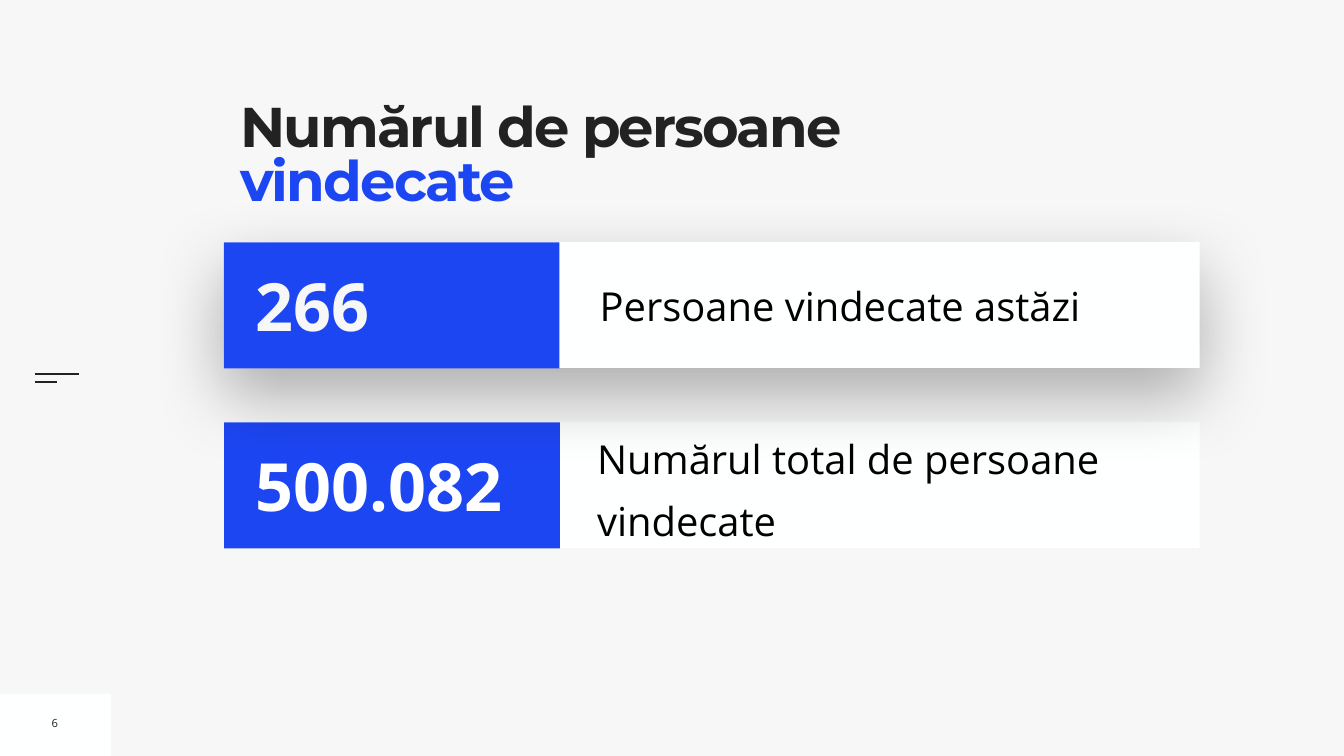
from lxml.etree import SubElement as Sub
from pptx import Presentation
from pptx.dml.color import RGBColor as Rgb
from pptx.enum.shapes import MSO_CONNECTOR as Conn, MSO_SHAPE as Kind
from pptx.enum.text import MSO_ANCHOR as Anchor, PP_ALIGN as Align
from pptx.oxml.ns import qn
from pptx.util import Inches, Pt

HUES = {"page": "F7F7F7", "white": "FEFFFF", "pure": "FFFFFF",
        "blue": "1D46F3", "ink": "222222", "black": "000000"}
deck = Presentation()
deck.slide_width, deck.slide_height = Inches(26.67), Inches(15)
COL, ROW = deck.slide_width / 60, deck.slide_height / 60
slide = deck.slides.add_slide(deck.slide_layouts[6])
slide.background.fill.solid()
slide.background.fill.fore_color.rgb = Rgb.from_string(HUES["page"])


def block(x, y, w, h, hue):
    rect = slide.shapes.add_shape(Kind.RECTANGLE, round(x * COL), round(y * ROW),
                                  round(w * COL), round(h * ROW))
    rect.shadow.inherit = False
    rect.line.fill.background()
    if hue:
        rect.fill.solid()
        rect.fill.fore_color.rgb = Rgb.from_string(HUES[hue])
    else:
        rect.fill.background()
    return rect


def write(box, *runs, size, font="Open Sans", bold=False, pad=0.1, lead=None,
          before=0, track=0, align=Align.LEFT, anchor=Anchor.MIDDLE, wrap=True,
          fill=None):
    frame = block(*box, fill).text_frame
    frame.word_wrap, frame.vertical_anchor = wrap, anchor
    frame.margin_left = frame.margin_right = Inches(pad)
    frame.margin_top = frame.margin_bottom = Inches(pad)
    para = frame.paragraphs[0]
    para.alignment, para.line_spacing, para.space_before = align, lead, Pt(before)
    for text, hue in runs:
        run = para.add_run()
        run.text = text
        run.font.name, run.font.size, run.font.bold = font, Pt(size), bold
        run.font.color.rgb = Rgb.from_string(HUES[hue])
        if track:
            run.font._element.set("spc", str(round(track * 100)))


block(0, 55.08, 4.95, 4.92, "white")
for y, end in [(29.68, 3.53), (30.32, 2.54)]:
    x, top = round(1.55 * COL), round(y * ROW)
    line = slide.shapes.add_connector(Conn.STRAIGHT, x, top, round(end * COL), top)
    line.line.color.rgb = Rgb.from_string(HUES["ink"])
    line.line.width = Pt(3)
    Sub(line._element.spPr, qn("a:effectLst"))

write((10.73, 8.28, 29.27, 10.92), ("Numărul de persoane ", "ink"),
      ("vindecate", "blue"), size=80, font="Montserrat", bold=True, pad=0,
      lead=0.8, track=-2.7, anchor=Anchor.TOP, fill="page")
write((2.07, 56.36, 0.76, 2.04), ("6", "ink"), size=16, align=Align.CENTER,
      wrap=False)

cards = [
    (10.01, 33.48, "500.082", "pure", "Numărul total de persoane vindecate",
     (26.66, 33.56, 26.88, 9.44), {"pad": 0, "lead": 1.3, "before": 20}),
    (9.99, 19.2, "266", "page", "Persoane vindecate astăzi",
     (26.55, 21.9, 26.46, 4.64), {}),
]
for x, y, count, hue, label, box, style in cards:
    card = block(x, y, 53.56 - x, 10, "white")
    write(box, (label, "black"), size=57, **style)
    block(x, y + 0.04, 14.98, 10, "blue")
    write((x + 1.19, y + 1.42, 13.57, 7.2), (count, hue), size=95, bold=True,
          fill="blue")

glow = card._element.spPr.find(qn("a:effectLst"))
shade = Sub(glow, qn("a:outerShdw"), blurRad=str(Pt(100)), dist=str(Pt(40)),
            dir="5400000", rotWithShape="0")
tint = Sub(shade, qn("a:srgbClr"), val=HUES["black"])
Sub(tint, qn("a:alpha"), val="30000")

deck.save("out.pptx")
